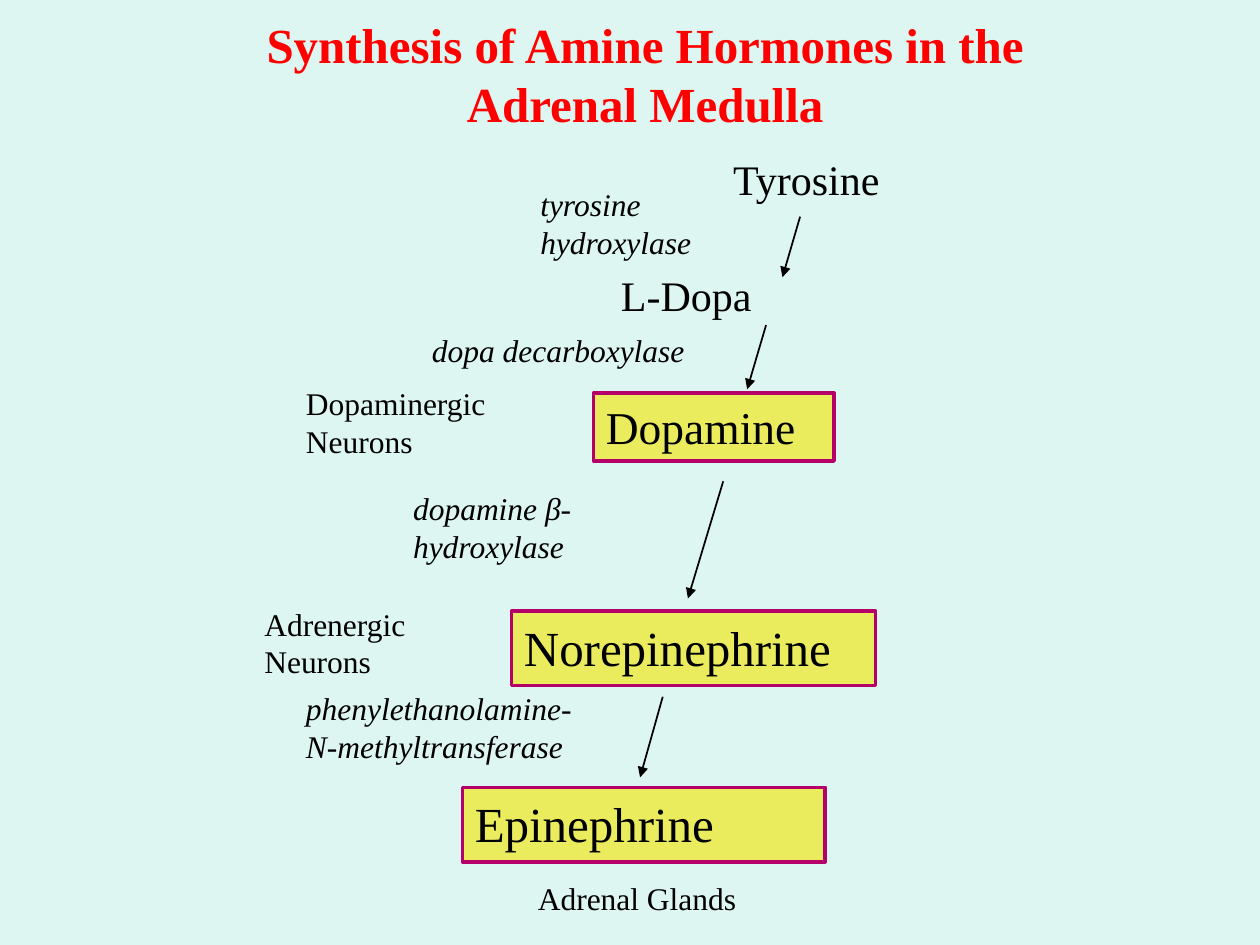
from lxml import etree
from pptx import Presentation
from pptx import util as u
from pptx.dml.color import RGBColor
from pptx.enum import shapes, text
from pptx.oxml import ns

FONT = "Times New Roman"
COLORS = {
    "background": "DEF6F1",
    "title": "FF0000",
    "ink": "000000",
    "hormone_fill": "EAEC5E",
    "hormone_line": "B50069",
}

PRECURSORS = [
    ("Tyrosine", (5.72, 1.17, 1.58, 0.5)),
    ("L-Dopa", (4.83, 2.09, 2, 0.5)),
]
HORMONES = [
    ("Dopamine", 26, (4.71, 3.12, 1.91, 0.54)),
    ("Norepinephrine", 28, (4.06, 4.85, 2.89, 0.59)),
    ("Epinephrine", 28, (3.67, 6.25, 2.88, 0.59)),
]
ENZYMES = [
    ("tyrosine hydroxylase", (4.19, 1.42, 2.06, 0.7)),
    ("dopa decarboxylase", (3.33, 2.58, 2.67, 0.4)),
    ("dopamine β-hydroxylase", (3.18, 3.83, 2.41, 0.7)),
    ("phenylethanolamine-N-methyltransferase", (2.33, 5.42, 2.5, 0.7)),
]
SITES = [
    ("Dopaminergic Neurons", (2.33, 3, 2.14, 0.7)),
    ("Adrenergic Neurons", (2, 4.75, 2.14, 0.7)),
    ("Adrenal Glands", (4.17, 6.93, 1.79, 0.4)),
]
REACTIONS = [
    (6.35, 1.72, 6.21, 2.2),
    (6.08, 2.58, 5.93, 3.09),
    (5.74, 3.82, 5.46, 4.75),
    (5.26, 5.53, 5.08, 6.17),
]


def color(name):
    return RGBColor.from_string(COLORS[name])


def inches(values):
    return [u.Inches(value) for value in values]


def write(shape, words, size, ink="ink", bold=False, italic=False,
          align=text.PP_ALIGN.LEFT, anchor=text.MSO_ANCHOR.TOP):
    frame = shape.text_frame
    frame.text = words
    frame.word_wrap = True
    frame.vertical_anchor = anchor
    para = frame.paragraphs[0]
    para.alignment = align
    font = para.runs[0].font
    font.name = FONT
    font.size = u.Pt(size)
    font.bold = bold
    font.italic = italic
    font.color.rgb = color(ink)


def add_title(page, words, box):
    title = page.shapes.title
    title.left, title.top, title.width, title.height = inches(box)
    write(title, words, 28, "title", bold=True,
          align=text.PP_ALIGN.CENTER, anchor=text.MSO_ANCHOR.MIDDLE)
    title.text_frame.auto_size = text.MSO_AUTO_SIZE.NONE


def add_label(page, words, box, size=18, italic=False):
    write(page.shapes.add_textbox(*inches(box)), words, size, italic=italic)


def add_hormone(page, words, size, box):
    shape = page.shapes.add_shape(shapes.MSO_SHAPE.RECTANGLE, *inches(box))
    shape.shadow.inherit = False
    shape.fill.solid()
    shape.fill.fore_color.rgb = color("hormone_fill")
    shape.line.color.rgb = color("hormone_line")
    shape.line.width = u.Pt(2)
    write(shape, words, size)


def add_arrow(page, ends):
    arrow = page.shapes.add_connector(shapes.MSO_CONNECTOR.STRAIGHT, *inches(ends))
    arrow.line.color.rgb = color("ink")
    arrow.line.width = u.Pt(1)
    line = arrow.line._get_or_add_ln()
    etree.SubElement(line, ns.qn("a:tailEnd"), type="triangle")
    etree.SubElement(arrow._element.spPr, ns.qn("a:effectLst"))


def add_pathway(page):
    for words, box in PRECURSORS:
        add_label(page, words, box, size=24)
    for words, size, box in HORMONES:
        add_hormone(page, words, size, box)
    for words, box in ENZYMES:
        add_label(page, words, box, italic=True)
    for words, box in SITES:
        add_label(page, words, box)
    for ends in REACTIONS:
        add_arrow(page, ends)


def main():
    deck = Presentation()
    deck.slide_width, deck.slide_height = inches((10, 7.5))
    page = deck.slides.add_slide(deck.slide_layouts[5])
    page.background.fill.solid()
    page.background.fill.fore_color.rgb = color("background")
    add_title(page, "Synthesis of Amine Hormones in the Adrenal Medulla",
              (1.33, 0.25, 7.58, 0.67))
    add_pathway(page)
    deck.save("out.pptx")


if __name__ == "__main__":
    main()
